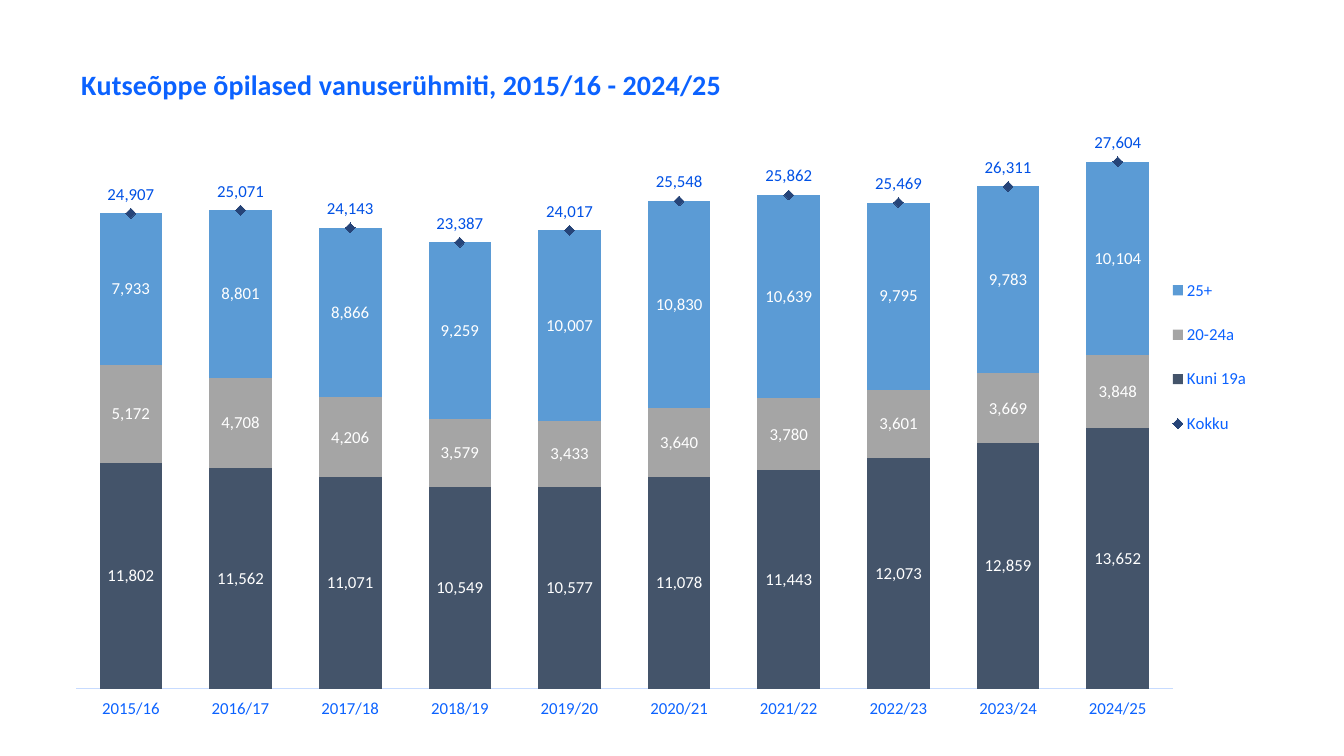
from copy import deepcopy
from typing import NamedTuple

from lxml.etree import SubElement
from pptx import Presentation
from pptx.chart.chart import Chart
from pptx.chart.data import CategoryChartData
from pptx.dml.color import RGBColor
from pptx.enum.chart import (XL_CHART_TYPE, XL_LABEL_POSITION,
                             XL_LEGEND_POSITION, XL_MARKER_STYLE,
                             XL_TICK_LABEL_POSITION, XL_TICK_MARK)
from pptx.oxml import parse_xml
from pptx.oxml.ns import nsdecls, qn
from pptx.text.text import Font
from pptx.util import Inches, Pt

HUES = {"navy": "44546A", "gray": "A5A5A5", "sky": "5B9BD5",
        "mark": "264478", "blue": "0B62FF", "total": "0051E5",
        "axis": "C7DBFF", "white": "FFFFFF", "base": "003087"}
COMMAS = "#,##0"
TITLE = "Kutseõppe õpilased vanuserühmiti, 2015/16 - 2024/25"


class Group(NamedTuple):
    name: str
    hue: str
    counts: tuple[int, ...]


AGES = (
    Group("Kuni 19a", "navy", (11802, 11562, 11071, 10549, 10577,
                               11078, 11443, 12073, 12859, 13652)),
    Group("20-24a", "gray", (5172, 4708, 4206, 3579, 3433,
                             3640, 3780, 3601, 3669, 3848)),
    Group("25+", "sky", (7933, 8801, 8866, 9259, 10007,
                         10830, 10639, 9795, 9783, 10104)),
)
TOTAL = Group("Kokku", "mark", tuple(map(sum, zip(*(age.counts for age in AGES)))))


def tint(hue: str) -> RGBColor:
    return RGBColor.from_string(HUES[hue])


def style(font: Font, hue: str, size: int = 12, bold: bool = False) -> None:
    font.name = "Calibri"
    font.size = Pt(size)
    font.bold = bold
    font.color.rgb = tint(hue)


def label(series, hue: str, place: XL_LABEL_POSITION) -> None:
    labels = series.data_labels
    labels.show_value = True
    labels.number_format = COMMAS
    labels.number_format_is_linked = False
    labels.position = place
    style(labels.font, hue)


def place(part, spot: int, inner: bool = False, **sides: float) -> None:
    for old in part.findall(qn("c:layout")):
        part.remove(old)
    layout = parse_xml(f"<c:layout {nsdecls('c')}><c:manualLayout/></c:layout>")
    if inner:
        SubElement(layout[0], qn("c:layoutTarget"), val="inner")
    for side in "xy":
        SubElement(layout[0], qn(f"c:{side}Mode"), val="edge")
    for side, share in sides.items():
        SubElement(layout[0], qn(f"c:{side}"), val=str(share))
    part.insert(spot, layout)


def split(chart: Chart) -> None:
    bars = chart._chartSpace.find(".//" + qn("c:barChart"))
    line = parse_xml(f'<c:lineChart {nsdecls("c")}><c:grouping val="standard"/>'
                     '<c:varyColors val="0"/><c:marker val="1"/></c:lineChart>')
    last = bars.findall(qn("c:ser"))[-1]
    for flag in last.findall(qn("c:invertIfNegative")):
        last.remove(flag)
    line.insert(2, last)
    for axis in bars.findall(qn("c:axId")):
        line.append(deepcopy(axis))
    bars.addnext(line)


def fill(chart: Chart) -> None:
    split(chart)
    bars, line = chart.plots
    bars.gap_width = 75
    bars.overlap = 100
    bars.vary_by_categories = False
    for age, series in zip(AGES, bars.series):
        series.invert_if_negative = False
        series.format.fill.solid()
        series.format.fill.fore_color.rgb = tint(age.hue)
        label(series, "white", XL_LABEL_POSITION.CENTER)
    total = line.series[0]
    total.smooth = False
    total.format.line.fill.background()
    mark = total.marker
    mark.style = XL_MARKER_STYLE.DIAMOND
    mark.size = 7
    mark.format.fill.solid()
    mark.format.fill.fore_color.rgb = tint(TOTAL.hue)
    mark.format.line.color.rgb = tint(TOTAL.hue)
    label(total, "total", XL_LABEL_POSITION.ABOVE)


def frame(chart: Chart) -> None:
    years = chart.category_axis
    years.major_tick_mark = XL_TICK_MARK.NONE
    years.tick_label_position = XL_TICK_LABEL_POSITION.LOW
    years.format.line.color.rgb = tint("axis")
    years.format.line.width = Pt(0.75)
    style(years.tick_labels.font, "blue")
    scale = chart.value_axis
    scale.minimum_scale = 0
    scale.maximum_scale = 30000
    scale.has_major_gridlines = False
    scale.tick_labels.number_format = COMMAS
    scale.tick_labels.number_format_is_linked = False
    scale.visible = False

    chart.has_title = True
    text = chart.chart_title.text_frame.paragraphs[0]
    run = text.add_run()
    run.text = TITLE
    style(run.font, "blue", 20, True)
    chart.has_legend = True
    chart.legend.position = XL_LEGEND_POSITION.RIGHT
    chart.legend.include_in_layout = False
    style(chart.legend.font, "blue")

    root = chart._chartSpace.find(qn("c:chart"))
    place(root.find(qn("c:title")), 1, x=0.02, y=0.04)
    place(root.find(qn("c:plotArea")), 0, True, x=0.02, y=0.12, w=0.89, h=0.82)
    place(root.find(qn("c:legend")), 1, x=0.9, y=0.32, w=0.08, h=0.29)


def main() -> None:
    deck = Presentation()
    deck.slide_width = Inches(13.33)
    deck.slide_height = Inches(7.5)
    slide = deck.slides.add_slide(deck.slide_layouts[6])
    data = CategoryChartData(number_format=COMMAS)
    data.categories = [f"{year}/{year % 100 + 1}" for year in range(2015, 2025)]
    for group in (*AGES, TOTAL):
        data.add_series(group.name, group.counts)
    chart = slide.shapes.add_chart(
        XL_CHART_TYPE.COLUMN_STACKED, Inches(0.51), Inches(0.32),
        Inches(12.22), Inches(6.93), data).chart
    style(chart.font, "base")
    fill(chart)
    frame(chart)
    deck.save("out.pptx")


if __name__ == "__main__":
    main()
